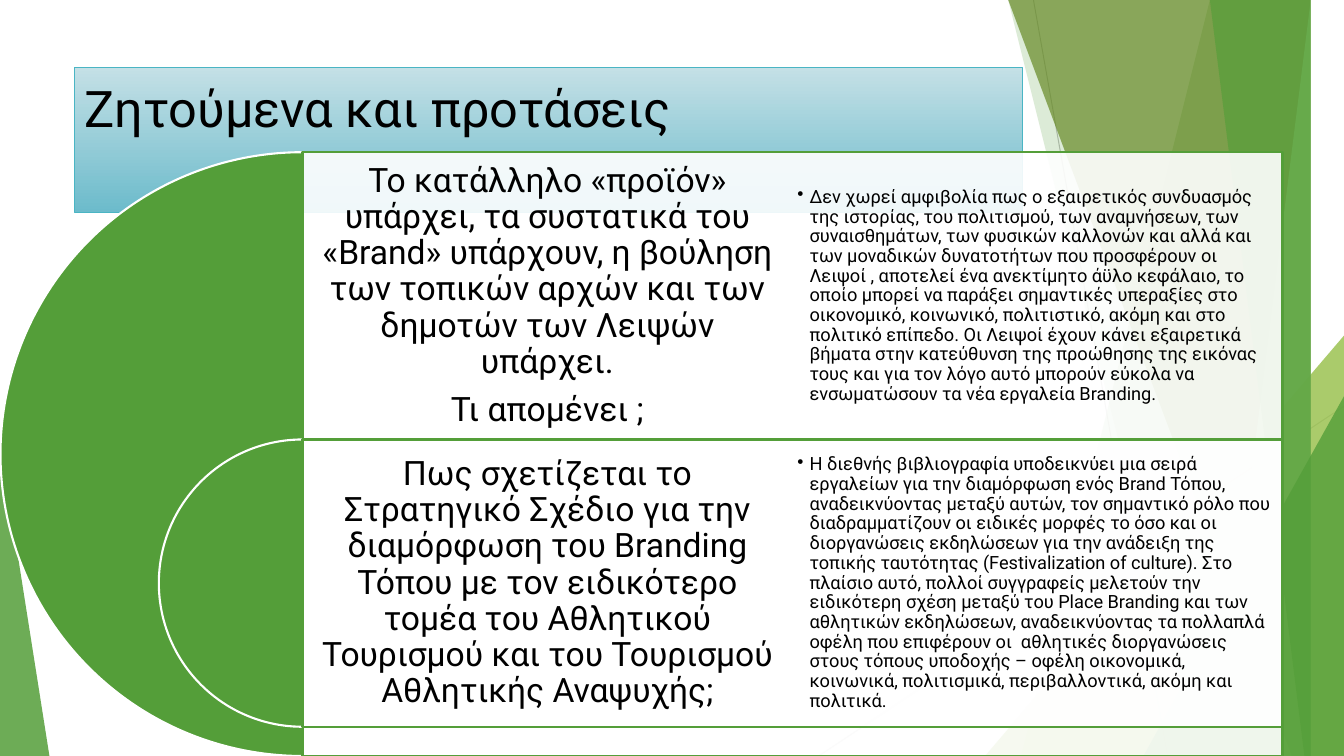
from dataclasses import dataclass

from lxml import etree
from pptx import Presentation
from pptx.dml.color import RGBColor
from pptx.enum.shapes import MSO_CONNECTOR, MSO_SHAPE
from pptx.enum.text import MSO_ANCHOR, PP_ALIGN
from pptx.oxml.ns import qn
from pptx.util import Inches, Pt

STRAIGHT = MSO_CONNECTOR.STRAIGHT
TRIANGLE = MSO_SHAPE.ISOSCELES_TRIANGLE
PIE = MSO_SHAPE.PIE
RECTANGLE = MSO_SHAPE.RECTANGLE
TOP, MIDDLE = MSO_ANCHOR.TOP, MSO_ANCHOR.MIDDLE
LEFT, CENTER = PP_ALIGN.LEFT, PP_ALIGN.CENTER


@dataclass(frozen=True)
class Theme:
    font: str = "Roboto"
    text: str = "000000"
    white: str = "FFFFFF"
    green: str = "549E39"
    lime: str = "8AB833"
    olive: str = "678A26"
    mint: str = "93D07D"
    ray_dark: str = "BFBFBF"
    ray_light: str = "D9D9D9"
    title_top: str = "C4E0E6"
    title_bottom: str = "6CBBCB"
    title_line: str = "4AB5C4"
    title_size: int = 36
    question_size: int = 24
    answer_size: int = 13
    outline: float = 1.5
    hairline: float = 0.75


THEME = Theme()
WIDTH, HEIGHT = 13.33, 7.5

TITLE = "Ζητούμενα και προτάσεις"
BANDS = [
    (
        [
            "Το κατάλληλο «προϊόν» υπάρχει, τα συστατικά του «Brand» υπάρχουν, η βούληση "
            "των τοπικών αρχών και των δημοτών των Λειψών υπάρχει.",
            "Τι απομένει ;",
        ],
        "Δεν χωρεί αμφιβολία πως ο εξαιρετικός συνδυασμός της ιστορίας, του πολιτισμού, "
        "των αναμνήσεων, των συναισθημάτων, των φυσικών καλλονών και αλλά και των μοναδικών "
        "δυνατοτήτων που προσφέρουν οι Λειψοί , αποτελεί ένα ανεκτίμητο άϋλο κεφάλαιο, το "
        "οποίο μπορεί να παράξει σημαντικές υπεραξίες στο οικονομικό, κοινωνικό, πολιτιστικό, "
        "ακόμη και στο πολιτικό επίπεδο. Οι Λειψοί έχουν κάνει εξαιρετικά βήματα στην "
        "κατεύθυνση της προώθησης της εικόνας τους και για τον λόγο αυτό μπορούν εύκολα να "
        "ενσωματώσουν τα νέα εργαλεία Branding.",
    ),
    (
        [
            "Πως σχετίζεται το Στρατηγικό Σχέδιο για την διαμόρφωση του Branding Τόπου με "
            "τον ειδικότερο τομέα του Αθλητικού Τουρισμού και του Τουρισμού Αθλητικής Αναψυχής;",
        ],
        "Η διεθνής βιβλιογραφία υποδεικνύει μια σειρά εργαλείων για την διαμόρφωση ενός Brand "
        "Τόπου, αναδεικνύοντας μεταξύ αυτών, τον σημαντικό ρόλο που διαδραμματίζουν οι ειδικές "
        "μορφές το όσο και οι διοργανώσεις εκδηλώσεων για την ανάδειξη της τοπικής ταυτότητας "
        "(Festivalization of culture). Στο πλαίσιο αυτό, πολλοί συγγραφείς μελετούν την "
        "ειδικότερη σχέση μεταξύ του Place Branding και των αθλητικών εκδηλώσεων, "
        "αναδεικνύοντας τα πολλαπλά οφέλη που επιφέρουν οι  αθλητικές διοργανώσεις στους "
        "τόπους υποδοχής – οφέλη οικονομικά, κοινωνικά, πολιτισμικά, περιβαλλοντικά, ακόμη "
        "και πολιτικά.",
    ),
]


def inches(*lengths):
    return [Inches(length) for length in lengths]


def paint(shape, color, opacity=100, line=None):
    shape.shadow.inherit = False
    shape.fill.solid()
    shape.fill.fore_color.rgb = RGBColor.from_string(color)
    if opacity < 100:
        tint = shape.fill._xPr.find(qn("a:solidFill"))[0]
        etree.SubElement(tint, qn("a:alpha")).set("val", str(opacity * 1000))
    if line:
        shape.line.color.rgb = RGBColor.from_string(line)
        shape.line.width = Pt(THEME.outline)
    else:
        shape.line.fill.background()


def write(shape, paragraphs, size, anchor, align, inset, spacing=1.0, after=0, bullet=False):
    frame = shape.text_frame
    margins = dict.fromkeys(("margin_left", "margin_right", "margin_top", "margin_bottom"), Inches(inset))
    for name, value in {**margins, "word_wrap": True, "vertical_anchor": anchor}.items():
        setattr(frame, name, value)
    for index, wording in enumerate(paragraphs):
        paragraph = frame.add_paragraph() if index else frame.paragraphs[0]
        if bullet:
            properties = paragraph._p.get_or_add_pPr()
            properties.set("marL", str(Inches(0.12)))
            properties.set("indent", str(Inches(-0.12)))
            etree.SubElement(properties, qn("a:buChar")).set("char", "•")
            paragraph.level = 1
        layout = {"alignment": align, "line_spacing": spacing, "space_after": Pt(after)}
        for name, value in layout.items():
            setattr(paragraph, name, value)
        run = paragraph.add_run()
        run.text = wording
        run.font.name = THEME.font
        run.font.size = Pt(size)
        run.font.color.rgb = RGBColor.from_string(THEME.text)


def add_ray(shapes, start, end, color):
    ray = shapes.add_connector(STRAIGHT, *inches(*start, *end))
    ray.line.color.rgb = RGBColor.from_string(color)
    ray.line.width = Pt(THEME.hairline)
    etree.SubElement(ray._element.spPr, qn("a:effectLst"))


def add_shard(shapes, box, top_x, bottom_x, color, opacity):
    left, top, width, height = box
    right, bottom = left + width, top + height
    outline = shapes.build_freeform(top_x, top, scale=Inches(1))
    outline.add_line_segments([(right, top), (right, bottom), (bottom_x, bottom)])
    paint(outline.convert_to_shape(), color, opacity)


def add_wedge(shapes, left, top, right, bottom, apex, color, opacity):
    wedge = shapes.add_shape(TRIANGLE, *inches(left, top, right - left, bottom - top))
    wedge.adjustments[0] = apex
    paint(wedge, color, opacity)


def add_backdrop(shapes, box):
    left, top, width, height = box
    right, bottom = left + width, top + height
    add_ray(shapes, (10.25, top), (11.58, bottom), THEME.ray_dark)
    add_ray(shapes, (right, 4.03), (8.12, bottom), THEME.ray_light)
    add_shard(shapes, box, 12.28, 10.04, THEME.green, 30)
    add_shard(shapes, box, 10.5, 11.82, THEME.green, 20)
    add_wedge(shapes, 9.77, 3.33, right, bottom, 1, THEME.lime, 72)
    add_shard(shapes, box, 10.21, 12.91, THEME.olive, 70)
    add_shard(shapes, box, 13.03, 11.92, THEME.mint, 70)
    add_shard(shapes, box, 11.96, 13.18, THEME.green, 65)
    add_wedge(shapes, 11.34, 3.93, right, bottom, 1, THEME.green, 80)
    add_wedge(shapes, left, 4.39, 0.49, bottom, 0, THEME.green, 85)


def add_title(shapes, box):
    title = shapes.add_textbox(*inches(*box))
    title.fill.gradient()
    title.fill.gradient_angle = 270
    for stop, color in zip(title.fill.gradient_stops, (THEME.title_top, THEME.title_bottom)):
        stop.color.rgb = RGBColor.from_string(color)
    title.line.color.rgb = RGBColor.from_string(THEME.title_line)
    title.line.width = Pt(THEME.hairline)
    write(title, [TITLE], THEME.title_size, TOP, LEFT, 0.1)


def add_band(shapes, box, row_height, question, answer):
    left, top, width, height = box
    column = width / 2
    half_disc = shapes.add_shape(PIE, *inches(left - height / 2, top, height, height))
    half_disc.adjustments[0] = 54
    half_disc.adjustments[1] = 162
    paint(half_disc, THEME.green, line=THEME.white)
    panel = shapes.add_shape(RECTANGLE, *inches(*box))
    paint(panel, THEME.white, 90, THEME.green)
    question_box = shapes.add_textbox(*inches(left, top, column, row_height))
    write(question_box, question, THEME.question_size, MIDDLE, CENTER, 0.1, 0.9, 8.4)
    answer_box = shapes.add_textbox(*inches(left + column, top, column, row_height))
    write(answer_box, [answer], THEME.answer_size, MIDDLE, LEFT, 0.05, 0.9, 2, bullet=True)


def add_target_list(shapes, box, row_height):
    left, top, width, height = box
    for index, (question, answer) in enumerate(BANDS):
        band_height = row_height if index else height
        band = (left, top + index * row_height, width, band_height)
        add_band(shapes, band, row_height, question, answer)


def main():
    deck = Presentation()
    deck.slide_width, deck.slide_height = inches(WIDTH, HEIGHT)
    shapes = deck.slides.add_slide(deck.slide_layouts[6]).shapes
    add_backdrop(shapes, (0, 0, WIDTH, HEIGHT))
    add_title(shapes, (0.74, 0.67, 9.4, 1.44))
    add_target_list(shapes, (3, 1.51, 9.72, 5.99), 2.85)
    deck.save("out.pptx")


if __name__ == "__main__":
    main()
